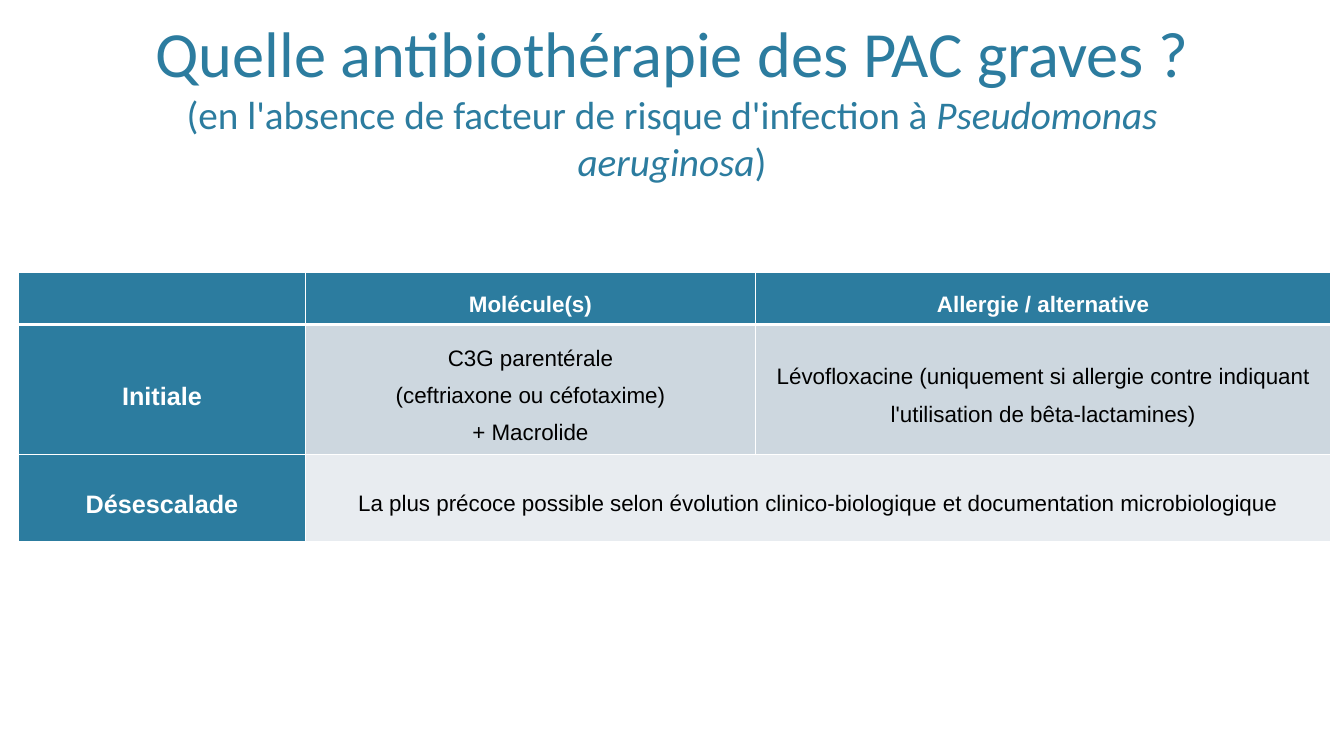
import pptx
import pptx.util
import pptx.dml.color
import pptx.enum.text
import pptx.oxml
import pptx.oxml.ns

Inches = pptx.util.Inches
Pt = pptx.util.Pt
RGBColor = pptx.dml.color.RGBColor
CENTER = pptx.enum.text.PP_ALIGN.CENTER
ANCHOR = pptx.enum.text.MSO_ANCHOR

TEAL = RGBColor(0x2C, 0x7C, 0x9F)
MIST = RGBColor(0xCD, 0xD7, 0xDF)
PALE = RGBColor(0xE8, 0xEC, 0xF0)
WHITE = RGBColor(0xFF, 0xFF, 0xFF)
BLACK = RGBColor(0x00, 0x00, 0x00)

WIDE, HIGH = 13.33, 7.5
COLS = (2.84, 4.47, 5.7)
ROWS = (0.52, 1.29, 0.86)
BANDS = (TEAL, MIST, PALE)
CELLS = (
    ((), ("Molécule(s)",), ("Allergie / alternative",)),
    (
        ("Initiale",),
        ("C3G parentérale", "(ceftriaxone ou céfotaxime)", "+ Macrolide"),
        ("Lévofloxacine (uniquement si allergie contre indiquant "
         "l'utilisation de bêta-lactamines)",),
    ),
    (
        ("Désescalade",),
        ("La plus précoce possible selon évolution clinico-biologique "
         "et documentation microbiologique",),
        (),
    ),
)


def share(left, top, width, height):
    return (Inches(left * WIDE), Inches(top * HIGH),
            Inches(width * WIDE), Inches(height * HIGH))


def add_run(para, text, name, size, color, bold=False, italic=False):
    run = para.add_run()
    run.text = text
    font = run.font
    font.name, font.size = name, Pt(size)
    font.bold, font.italic = bold, italic
    font.color.rgb = color


def add_title(slide, box):
    frame = slide.shapes.add_textbox(*box).text_frame
    frame.word_wrap = True
    frame.vertical_anchor = ANCHOR.BOTTOM
    para = frame.paragraphs[0]
    para.alignment = CENTER
    add_run(para, "Quelle antibiothérapie des PAC graves ?", "Calibri", 46, TEAL)
    para.add_line_break()
    for text, italic in (
        ("(en l'absence de facteur de risque d'infection à ", False),
        ("Pseudomonas aeruginosa", True),
        (")", False),
    ):
        add_run(para, text, "Calibri", 28, TEAL, italic=italic)


def add_edges(cell, top, bottom):
    props = cell._tc.get_or_add_tcPr()
    edges = (("lnL", 1), ("lnR", 1), ("lnT", top), ("lnB", bottom))
    for spot, (tag, width) in enumerate(edges):
        line = pptx.oxml.parse_xml(
            f'<a:{tag} {pptx.oxml.ns.nsdecls("a")} w="{Pt(width)}">'
            f'<a:solidFill><a:srgbClr val="{WHITE}"/></a:solidFill></a:{tag}>'
        )
        props.insert(spot, line)


def fill_cell(cell, lines, row, col):
    head = row == 0 or col == 0
    cell.fill.solid()
    cell.fill.fore_color.rgb = TEAL if head else BANDS[row]
    add_edges(cell, 3 if row == 1 else 1, 3 if row == 0 else 1)
    cell.vertical_anchor = ANCHOR.MIDDLE
    cell.margin_left = cell.margin_right = Inches(0.07)
    cell.margin_top = cell.margin_bottom = 0
    frame = cell.text_frame
    for rank, text in enumerate(lines):
        para = frame.add_paragraph() if rank else frame.paragraphs[0]
        para.alignment = CENTER
        para.line_spacing = 1.5
        add_run(para, text, "Arial", 18 if col == 0 else 16,
                WHITE if head else BLACK, bold=head)


def add_grid(slide, box):
    table = slide.shapes.add_table(len(ROWS), len(COLS), *box).table
    for col, part in zip(table.columns, COLS):
        col.width = int(box[2] * part / sum(COLS))
    for row, part in zip(table.rows, ROWS):
        row.height = int(box[3] * part / sum(ROWS))
    for row, line in enumerate(CELLS):
        for col, lines in enumerate(line):
            fill_cell(table.cell(row, col), lines, row, col)
    table.cell(2, 1).merge(table.cell(2, 2))


def main():
    deck = pptx.Presentation()
    deck.slide_width, deck.slide_height = Inches(WIDE), Inches(HIGH)
    slide = deck.slides.add_slide(deck.slide_layouts[6])
    add_title(slide, share(0.06, 0.055, 0.88, 0.195))
    add_grid(slide, share(0.014, 0.36, 0.976, 0.356))
    deck.save("out.pptx")


if __name__ == "__main__":
    main()
